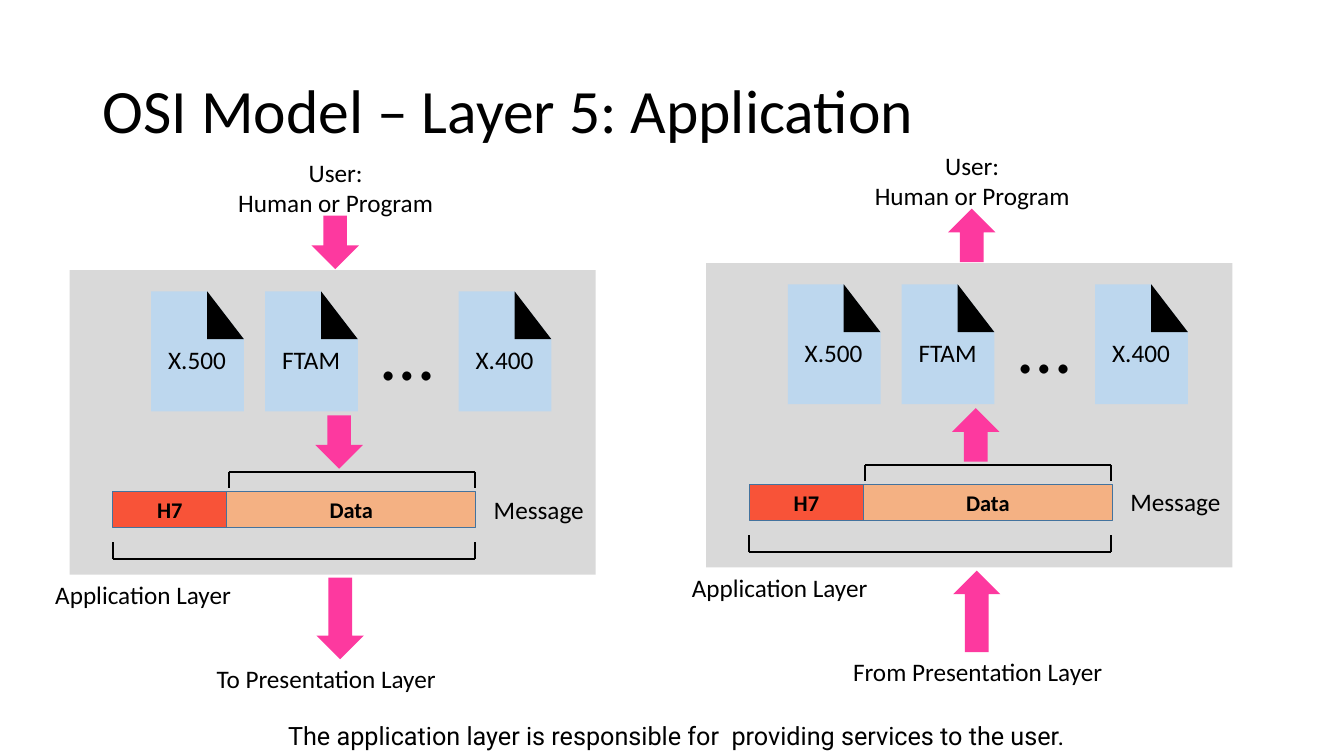
import pptx
import pptx.dml.color
import pptx.enum.shapes
import pptx.enum.text
import pptx.util
from pptx.oxml import parse_xml

CELL = 0.1  # grid cell in inches; all lengths below count cells
COLORS = {
    "text": "000000",
    "panel": "D9D9D9",
    "document": "BDD7EE",
    "fold": "000000",
    "header": "F85338",
    "data": "F4B183",
    "edge": "43739E",
    "arrow": "FD399F",
}
SHAPES = pptx.enum.shapes.MSO_SHAPE
ALIGN = pptx.enum.text.PP_ALIGN
MIDDLE = pptx.enum.text.MSO_ANCHOR.MIDDLE
NO_SHADOW = '<a:effectLst xmlns:a="http://schemas.openxmlformats.org/drawingml/2006/main"/>'
DOCUMENTS = {"X.500": 8.1, "FTAM": 19.4, "X.400": 38.6}
DOC_W, DOC_H = 9.2, 11.9
FOLD_W, FOLD_H = 3.65, 4.75
ARROWS = [(24, -5.4, 5.3), (24.4, 14.4, 5.3), (24.5, 30.5, 8.1)]  # column, row, length


def cells(*counts):
    return [pptx.util.Inches(n * CELL) for n in counts]


def rgb(name):
    return pptx.dml.color.RGBColor.from_string(COLORS[name])


def paint(s, fill, edge=None):
    s.shadow.inherit = False
    s.fill.solid()
    s.fill.fore_color.rgb = rgb(fill)
    if edge:
        s.line.color.rgb = rgb(edge)
        s.line.width = pptx.util.Pt(0.75)
    else:
        s.line.fill.background()


def write(tf, text, size, font="Calibri", bold=False, align=None):
    tf.text = text
    for p in tf.paragraphs:
        p.alignment = align
        for r in p.runs:
            r.font.size = pptx.util.Pt(size)
            r.font.name = font
            r.font.bold = bold
            r.font.color.rgb = rgb("text")


def add_label(slide, x, y, w, h, text, size=18, font="Calibri", align=ALIGN.LEFT):
    tf = slide.shapes.add_textbox(*cells(x, y, w, h)).text_frame
    tf.word_wrap = False
    tf.auto_size = pptx.enum.text.MSO_AUTO_SIZE.SHAPE_TO_FIT_TEXT
    write(tf, text, size, font, align=align)


def add_block(slide, kind, x, y, w, h, fill, edge=None):
    s = slide.shapes.add_shape(kind, *cells(x, y, w, h))
    paint(s, fill, edge)
    return s


def add_field(slide, x, y, w, h, text, fill):
    s = add_block(slide, SHAPES.RECTANGLE, x, y, w, h, fill, "edge")
    s.text_frame.vertical_anchor = MIDDLE
    write(s.text_frame, text, 16, bold=True, align=ALIGN.CENTER)


def add_document(slide, x, y, text):
    fold_x = x + DOC_W - FOLD_W
    outline = [(fold_x, y), (x + DOC_W, y + FOLD_H), (x + DOC_W, y + DOC_H), (x, y + DOC_H)]
    builder = slide.shapes.build_freeform(*cells(x, y))
    builder.add_line_segments([cells(*point) for point in outline], close=True)
    paint(builder.convert_to_shape(), "document")
    add_block(slide, SHAPES.RIGHT_TRIANGLE, fold_x, y, FOLD_W, FOLD_H, "fold")
    add_label(slide, x + 0.7, y + 4.8, 7.8, 4, text)


def add_line(slide, x1, y1, x2, y2):
    straight = pptx.enum.shapes.MSO_CONNECTOR.STRAIGHT
    s = slide.shapes.add_connector(straight, *cells(x1, y1, x2, y2))
    s.line.color.rgb = rgb("text")
    s.line.width = pptx.util.Pt(1.5)
    s._element.spPr.append(parse_xml(NO_SHADOW))


def add_bracket(slide, left, right, bar_y, tip_y):
    add_line(slide, left, bar_y, right, bar_y)
    for x in (left, right):
        add_line(slide, x, bar_y, x, tip_y)


def add_side(slide, x, y, neighbour, neighbour_w, upward):
    # Panel and application documents
    add_block(slide, SHAPES.RECTANGLE, x, y, 52.2, 30.2, "panel")
    for text, column in DOCUMENTS.items():
        add_document(slide, x + column, y + 2.1, text)
    add_label(slide, x + 30, y + 3, 7.2, 10.1, "…", 54)

    # Message with its brackets
    add_bracket(slide, x + 4.3, x + 40.2, y + 28.7, y + 27)
    add_bracket(slide, x + 15.8, x + 40.2, y + 20, y + 21.6)
    add_field(slide, x + 15.6, y + 22, 24.7, 3.5, "Data", "data")
    add_field(slide, x + 4.3, y + 22, 11.3, 3.5, "H7", "header")
    add_label(slide, x + 41.1, y + 21.7, 11, 4, "Message")

    # Labels around the panel
    add_label(slide, x + 15.6, y - 11.7, 21.6, 7.1, "User:\nHuman or Program", align=ALIGN.CENTER)
    add_label(slide, x - 2.4, y + 30.2, 19.7, 4, "Application Layer")
    add_label(slide, x + 13.6, y + 38.5, neighbour_w, 4, neighbour)

    # Direction of the data flow
    for column, row, length in ARROWS:
        s = add_block(slide, SHAPES.DOWN_ARROW, x + column, y + row, 4.7, length, "arrow")
        s.rotation = 180 if upward else 0


def add_title(slide, text):
    tf = slide.shapes.add_textbox(*cells(9.2, 4, 115, 14.5)).text_frame
    tf.word_wrap = True
    tf.vertical_anchor = MIDDLE
    write(tf, text, 44)
    tf.paragraphs[0].line_spacing = 0.9


def main():
    prs = pptx.Presentation()
    prs.slide_width, prs.slide_height = cells(133.33, 75)
    slide = prs.slides.add_slide(prs.slide_layouts[6])
    add_title(slide, "OSI Model – Layer 5: Application")
    add_side(slide, 6.9, 26.8, "To Presentation Layer", 24, upward=False)
    add_side(slide, 70.05, 26.1, "From Presentation Layer", 27, upward=True)
    add_label(slide, 27.6, 71, 80.9, 4,
              "The application layer is responsible for  providing services to the user.",
              font="Roboto")
    prs.save("out.pptx")


if __name__ == "__main__":
    main()
